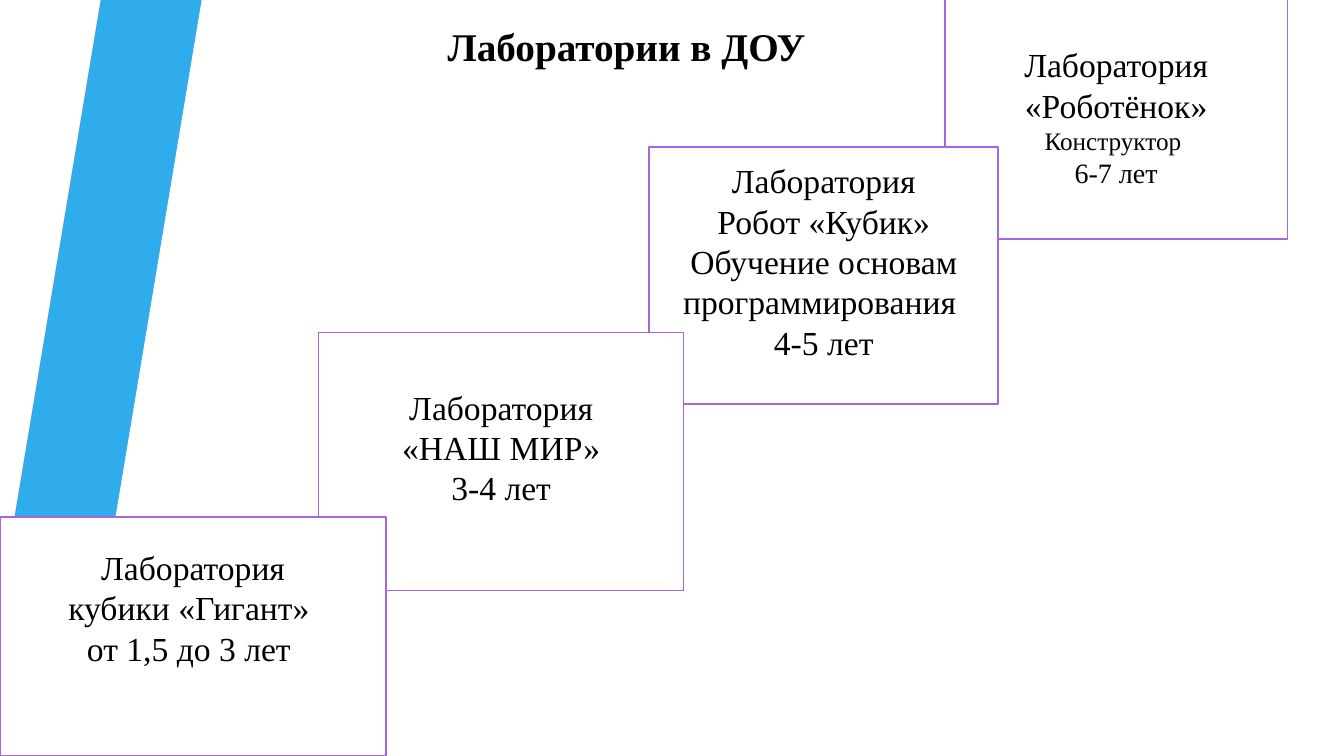
from dataclasses import dataclass

from pptx import Presentation
from pptx.dml.color import RGBColor
from pptx.enum.shapes import MSO_SHAPE as Shape
from pptx.enum.text import MSO_ANCHOR as Anchor, MSO_AUTO_SIZE as Fit, PP_ALIGN as Align
from pptx.slide import Slide
from pptx.util import Inches, Pt

BLACK = RGBColor(0x00, 0x00, 0x00)
WHITE = RGBColor(0xFF, 0xFF, 0xFF)
GRAY = RGBColor(0x59, 0x59, 0x59)
BLUE = RGBColor(0x30, 0xAC, 0xEC)
VIOLET = RGBColor(0xA6, 0x66, 0xE1)
FONT = "Times New Roman"
PAD = 0.05


@dataclass
class Line:
    text: str
    size: int = 24


@dataclass
class Lab:
    left: float
    top: float
    width: float
    height: float
    lines: list[Line]
    lift: float = 0  # extra inches of space kept below the text


@dataclass
class Band:
    color: RGBColor
    points: list[tuple[float, float]]


BANDS = [
    Band(BLUE, [(0.5, 5.78), (0.77, 5.83), (1.73, 0), (1.45, 0)]),
    Band(GRAY, [(1.39, 0), (1.11, 0), (0.16, 5.73), (0.44, 5.77)]),
]

LABS = [
    Lab(9.37, -0.06, 3.4, 2.43, [
        Line("Лаборатория"), Line("«Роботёнок»"),
        Line("Конструктор ", 18), Line("6-7 лет", 20)]),
    Lab(6.44, 1.46, 3.46, 2.55, [
        Line("Лаборатория"), Line("Робот «Кубик»"),
        Line("Обучение основам программирования "), Line("4-5 лет")], 0.29),
    Lab(3.16, 3.3, 3.62, 2.56, [
        Line("Лаборатория"), Line("«НАШ МИР»"), Line("3-4 лет")], 0.29),
    Lab(0, 5.13, 3.83, 2.37, [
        Line("Лаборатория"), Line("кубики «Гигант» "),
        Line("от 1,5 до 3 лет ")], 0.58),
]


def add_band(slide: Slide, band: Band) -> None:
    first, *rest = band.points
    pen = slide.shapes.build_freeform(*first, scale=Inches(1))
    pen.add_line_segments(rest, close=True)
    shape = pen.convert_to_shape()
    shape.shadow.inherit = False
    shape.fill.solid()
    shape.fill.fore_color.rgb = band.color
    shape.line.fill.background()


def set_title(slide: Slide, text: str) -> None:
    title = slide.shapes.title
    title.left, title.top = Inches(4.34), Inches(0.17)
    title.width, title.height = Inches(3.79), Inches(0.57)
    frame = title.text_frame
    frame.text = text
    frame.word_wrap = False
    frame.auto_size = Fit.NONE
    frame.vertical_anchor = Anchor.TOP
    para = frame.paragraphs[0]
    para.alignment = Align.LEFT
    para.font.name = FONT
    para.font.size = Pt(28)
    para.font.bold = True
    para.font.color.rgb = BLACK


def add_lab(slide: Slide, lab: Lab) -> None:
    box = slide.shapes.add_shape(
        Shape.RECTANGLE, Inches(lab.left), Inches(lab.top),
        Inches(lab.width), Inches(lab.height))
    box.shadow.inherit = False
    box.fill.solid()
    box.fill.fore_color.rgb = WHITE
    box.line.color.rgb = VIOLET
    box.line.width = Pt(1.25)
    frame = box.text_frame
    frame.word_wrap = True
    frame.vertical_anchor = Anchor.MIDDLE
    frame.margin_bottom = Inches(PAD + lab.lift)
    for i, line in enumerate(lab.lines):
        para = frame.add_paragraph() if i else frame.paragraphs[0]
        para.text = line.text
        para.alignment = Align.CENTER
        para.font.name = FONT
        para.font.size = Pt(line.size)
        para.font.color.rgb = BLACK


def main() -> None:
    deck = Presentation()
    deck.slide_width, deck.slide_height = Inches(13.33), Inches(7.5)
    slide = deck.slides.add_slide(deck.slide_layouts.get_by_name("Title Only"))
    set_title(slide, "Лаборатории в ДОУ")
    for band in BANDS:
        add_band(slide, band)
    for lab in LABS:
        add_lab(slide, lab)
    deck.save("out.pptx")


if __name__ == "__main__":
    main()
